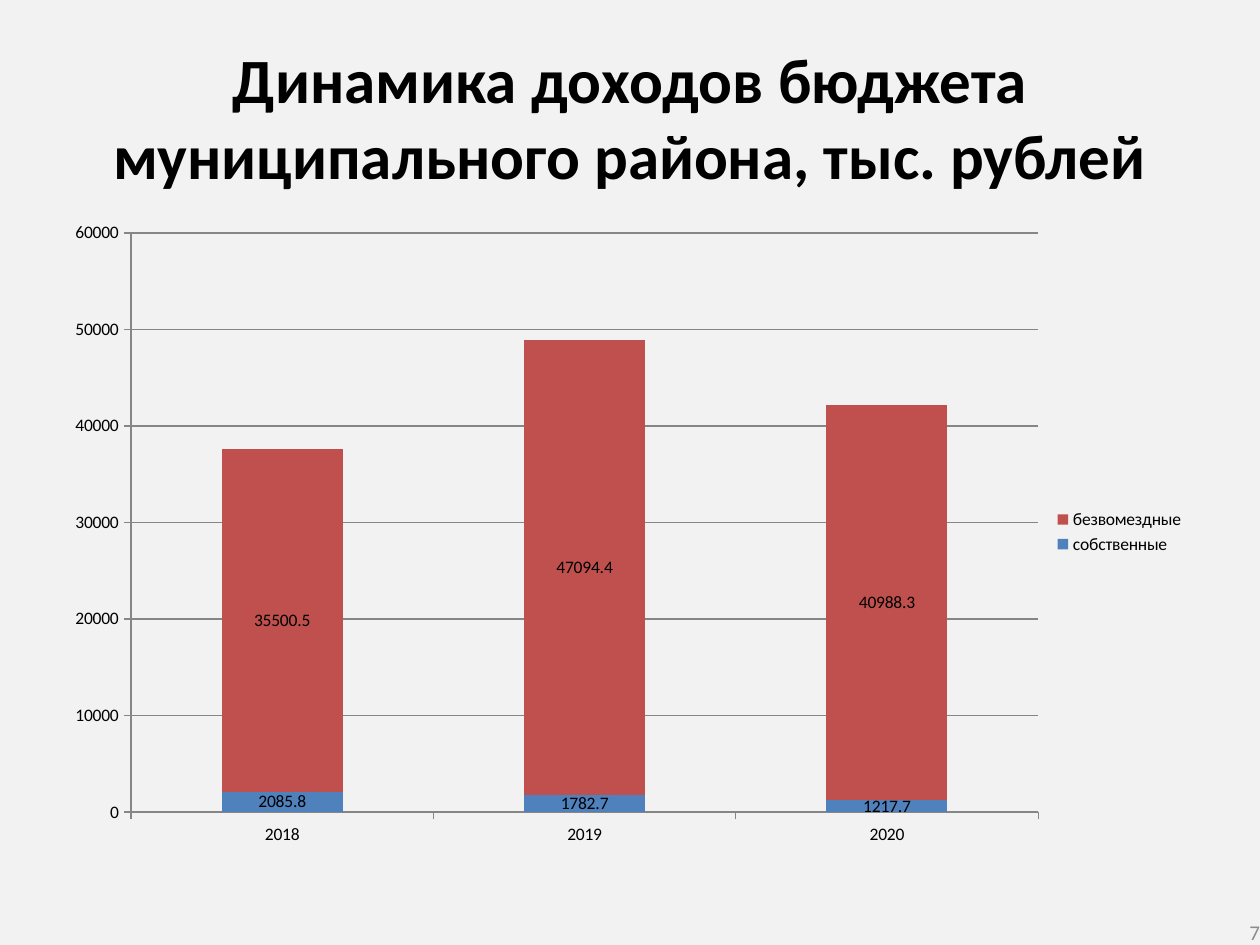
from lxml import etree
from pptx import Presentation
from pptx.chart.data import CategoryChartData
from pptx.dml.color import RGBColor
from pptx.enum.chart import XL_CHART_TYPE as Kind, XL_LEGEND_POSITION as Side
from pptx.enum.chart import XL_LABEL_POSITION as Spot, XL_TICK_MARK as Tick
from pptx.enum.text import MSO_ANCHOR as Anchor, PP_ALIGN as Align
from pptx.oxml.ns import qn
from pptx.util import Inches, Pt

YEARS = ["2018", "2019", "2020"]
INCOME = [
    ("собственные", "4F81BD", [2085.8, 1782.7, 1217.7]),
    ("безвомездные", "C0504D", [35500.5, 47094.4, 40988.3]),
]


def rgb(code):
    return RGBColor.from_string(code)


def set_plot(chart, x, y, w, h):
    """Fix the inner plot area, in fractions of the chart's size."""
    area = chart._chartSpace.chart.plotArea
    for old in area.findall(qn("c:layout")):
        area.remove(old)
    layout = etree.Element(qn("c:layout"))
    area.insert(0, layout)
    manual = etree.SubElement(layout, qn("c:manualLayout"))
    parts = [("layoutTarget", "inner"), ("xMode", "edge"), ("yMode", "edge"),
             ("x", x), ("y", y), ("w", w), ("h", h)]
    for name, val in parts:
        etree.SubElement(manual, qn(f"c:{name}")).set("val", str(val))


class Page:
    """The style and the current slide."""
    font = "Calibri"
    ink = "000000"
    rule = "868686"

    def __init__(self, deck, back):
        self.slide = deck.slides.add_slide(deck.slide_layouts[6])
        fill = self.slide.background.fill
        fill.solid()
        fill.fore_color.rgb = rgb(back)

    def style(self, font, size, color, bold=False):
        font.name = self.font
        font.size = Pt(size)
        font.bold = bold
        font.color.rgb = rgb(color)

    def text(self, words, box, size, color, align, bold=False, inset=(0.1, 0.05)):
        frame = self.slide.shapes.add_textbox(*map(Inches, box)).text_frame
        frame.word_wrap = True
        frame.vertical_anchor = Anchor.MIDDLE
        frame.margin_left = frame.margin_right = Inches(inset[0])
        frame.margin_top = frame.margin_bottom = Inches(inset[1])
        frame.text = words
        para = frame.paragraphs[0]
        para.alignment = align
        self.style(para.runs[0].font, size, color, bold)

    def axis(self, axis):
        axis.major_tick_mark = Tick.OUTSIDE
        axis.minor_tick_mark = Tick.NONE
        axis.format.line.color.rgb = rgb(self.rule)
        axis.format.line.width = Pt(0.75)

    def chart(self, cats, rows, box, size):
        data = CategoryChartData()
        data.categories = cats
        for name, _, vals in rows:
            data.add_series(name, vals)
        chart = self.slide.shapes.add_chart(
            Kind.COLUMN_STACKED, *map(Inches, box), data).chart
        self.style(chart.font, size, self.ink)
        chart.has_title = False
        chart.has_legend = True
        chart.legend.position = Side.RIGHT
        chart.legend.include_in_layout = False

        for axis in (chart.category_axis, chart.value_axis):
            self.axis(axis)
        scale = chart.value_axis
        scale.minimum_scale, scale.maximum_scale = 0, 60000
        scale.major_unit = 10000
        scale.has_major_gridlines = True
        grid = scale.major_gridlines.format.line
        grid.color.rgb = rgb(self.rule)
        grid.width = Pt(0.75)

        plot = chart.plots[0]
        plot.gap_width, plot.overlap = 150, 100
        plot.vary_by_categories = False
        for series, (_, color, _) in zip(plot.series, rows):
            series.format.fill.solid()
            series.format.fill.fore_color.rgb = rgb(color)
            series.invert_if_negative = False
            labels = series.data_labels
            labels.show_value = True
            labels.position = Spot.CENTER
            self.style(labels.font, size, self.ink)
        return chart


def main():
    deck = Presentation()
    deck.slide_width, deck.slide_height = Inches(10), Inches(7.5)
    page = Page(deck, "F2F2F2")
    page.text("Динамика доходов бюджета муниципального района, тыс. рублей",
              (0.5, 0.3, 9, 1.25), 36, page.ink, Align.CENTER, bold=True)
    page.text("7", (7.67, 7.29, 2.33, 0.21), 12, "8C8C8C", Align.RIGHT,
              inset=(0, 0))
    chart = page.chart(YEARS, INCOME, (0.5, 1.75, 9, 4.95), 10)
    set_plot(chart, 0.06, 0.02, 0.8, 0.93)
    deck.save("out.pptx")


if __name__ == "__main__":
    main()
